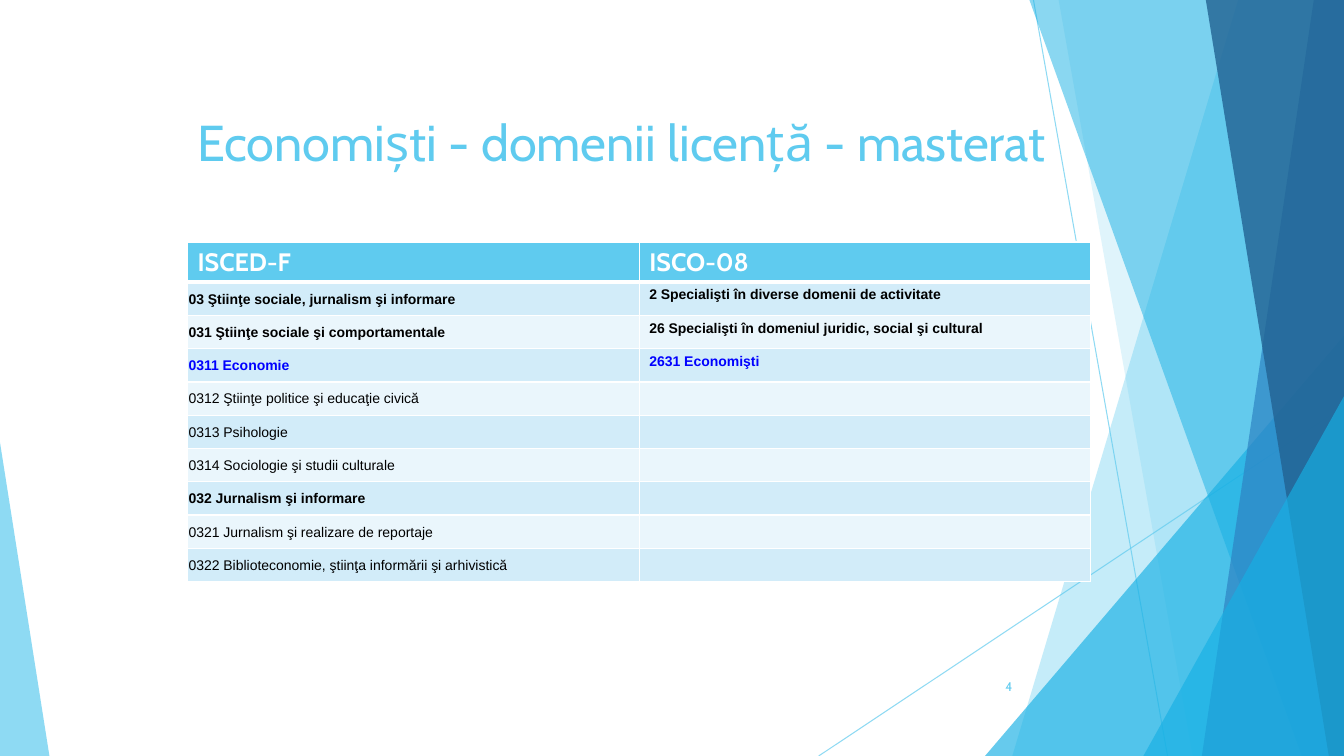
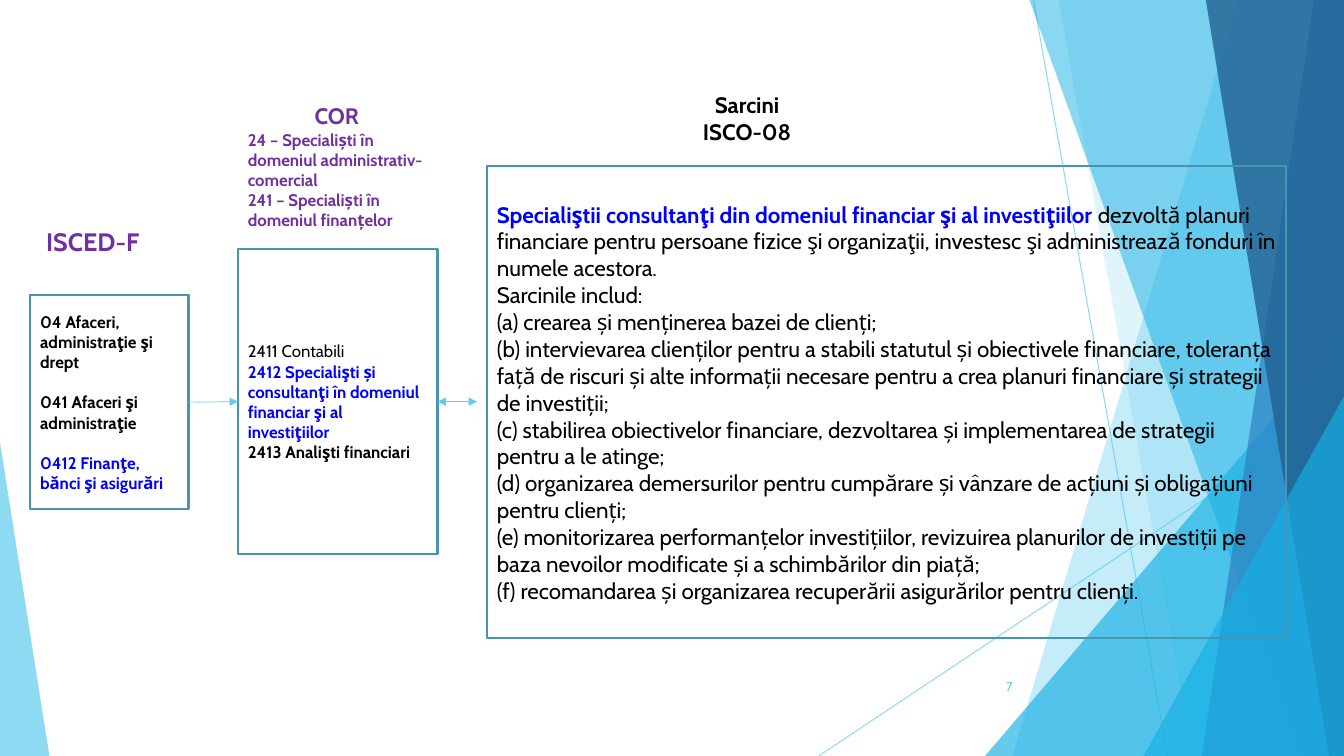
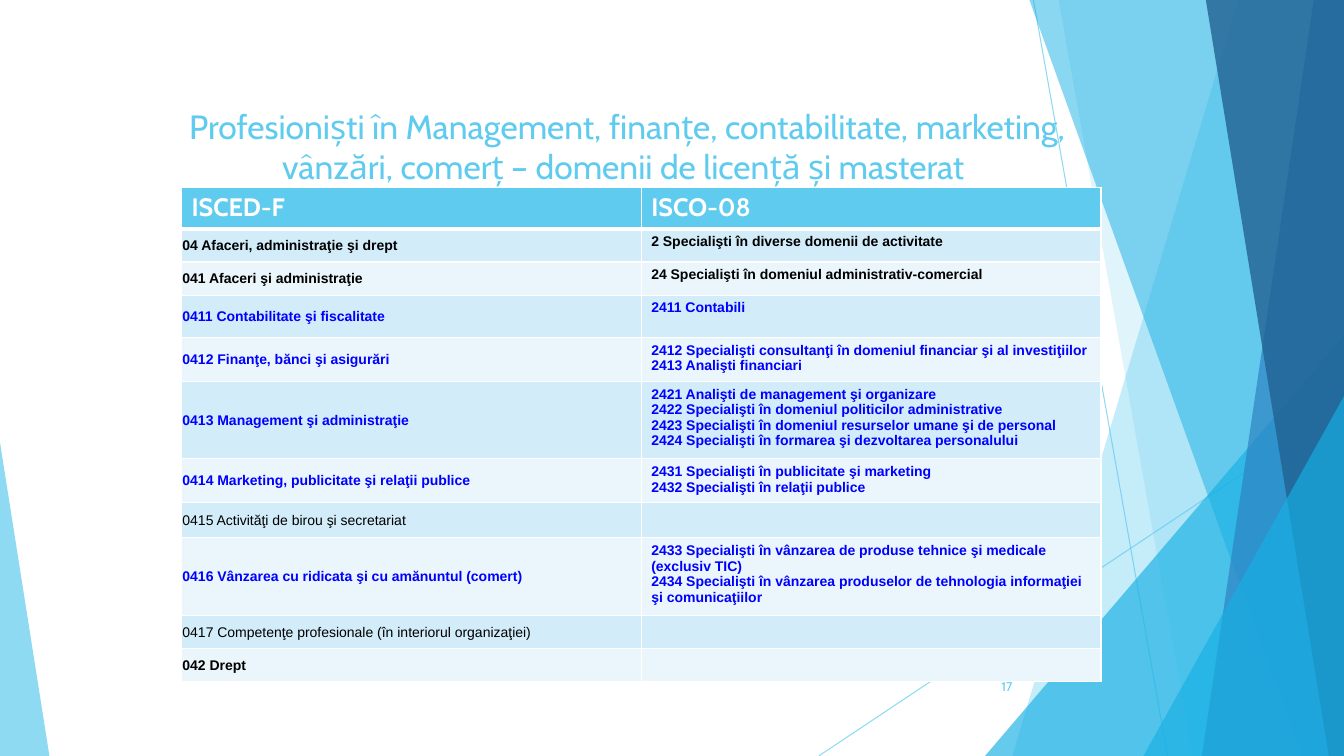
"""Builds three slides that match ISCED-F study fields with ISCO-08 occupations."""
import lxml.etree
import pptx
import pptx.dml.color
import pptx.enum.shapes
import pptx.enum.text
import pptx.oxml.ns
import pptx.util

Inches = pptx.util.Inches
Pt = pptx.util.Pt
RGB = pptx.dml.color.RGBColor.from_string
qn = pptx.oxml.ns.qn
SHAPE = pptx.enum.shapes.MSO_SHAPE
ALIGN = pptx.enum.text.PP_ALIGN
ANCHOR = pptx.enum.text.MSO_ANCHOR


class Theme:
    """Colours, fonts and text styles."""
    width, height = 13.33, 7.5
    sky, azure, blue, navy = "5FCBEF", "17B0E4", "2E83C3", "226292"
    white, black, accent, purple = "FFFFFF", "000000", "0000FF", "7030A0"
    outline = "4696B1"
    stripes = ("EAF6FC", "D2ECF9")
    styles = {
        "title": ("Cabin", 36, False, sky, ALIGN.CENTER),
        "small title": ("Cabin", 24, False, sky, ALIGN.CENTER),
        "number": ("Cabin", 9, False, sky, ALIGN.RIGHT),
        "header": ("Cabin", 18, True, white, ALIGN.LEFT),
        "group": ("Arial", 10, True, black, ALIGN.LEFT),
        "match": ("Arial", 10, True, accent, ALIGN.LEFT),
        "plain": ("Arial", 10, False, black, ALIGN.LEFT),
        "label": ("Cabin", 18, True, purple, ALIGN.CENTER),
        "cor": ("Cabin", 16, True, purple, ALIGN.CENTER),
        "cor group": ("Cabin", 12, True, purple, ALIGN.LEFT),
        "tasks label": ("Cabin", 16, True, black, ALIGN.CENTER),
        "task": ("Cabin", 16, False, black, ALIGN.LEFT),
        "task name": ("Cabin", 16, True, accent, ALIGN.LEFT),
        "code": ("Cabin", 12, False, black, ALIGN.LEFT),
        "bold code": ("Cabin", 12, True, black, ALIGN.LEFT),
        "match code": ("Cabin", 12, True, accent, ALIGN.LEFT),
    }


RAYS = [((10.25, 0), (11.58, 7.5)), ((13.33, 4.03), (8.12, 7.5))]
BACKDROP = [
    ("band", (12.28, 10.04), Theme.sky, 36),
    ("band", (10.5, 11.83), Theme.sky, 20),
    ("triangle", (9.77, 3.33, 3.56, 4.17, 1), Theme.azure, 66),
    ("band", (10.21, 12.91), Theme.azure, 50),
    ("band", (13.03, 11.92), Theme.blue, 70),
    ("band", (11.96, 13.18), Theme.navy, 80),
    ("triangle", (11.34, 3.93, 1.99, 3.57, 1), Theme.azure, 66),
    ("triangle", (0, 4.39, 0.49, 3.11, 0), Theme.sky, 70),
]

HEADERS = ("ISCED-F", "ISCO-08")
ECONOMISTS = {
    "title": ("Economiști - domenii licență - masterat ", "title"),
    "title at": (1.52, 1.05, 9.4, 0.93),
    "table at": (1.86, 2.4, 8.96),
    "header height": 0.4,
    "number": 4,
    "rows": [
        (0.33, "group", "03 Ştiinţe sociale, jurnalism şi informare",
         ["2 Specialişti în diverse domenii de activitate"]),
        (0.33, "group", "031 Ştiinţe sociale şi comportamentale",
         ["26 Specialişti în domeniul juridic, social şi cultural"]),
        (0.33, "match", "0311 Economie", ["2631 Economişti"]),
        (0.33, "plain", "0312 Ştiinţe politice şi educaţie civică", []),
        (0.33, "plain", "0313 Psihologie", []),
        (0.33, "plain", "0314 Sociologie şi studii culturale", []),
        (0.33, "group", "032 Jurnalism şi informare", []),
        (0.33, "plain", "0321 Jurnalism şi realizare de reportaje", []),
        (0.33, "plain", "0322 Biblioteconomie, ştiinţa informării şi arhivistică", []),
    ],
}
MANAGERS = {
    "title": ("Profesioniști în Management, finanțe, contabilitate, marketing, "
              "vânzări, comerț – domenii de licență și masterat ", "small title"),
    "title at": (1.52, 1, 9.4, 0.71),
    "table at": (1.8, 1.86, 9.12),
    "header height": 0.41,
    "number": 17,
    "rows": [
        (0.33, "group", "04 Afaceri, administraţie şi drept",
         ["2 Specialişti în diverse domenii de activitate"]),
        (0.33, "group", "041 Afaceri şi administraţie",
         ["24 Specialişti în domeniul administrativ-comercial"]),
        (0.42, "match", "0411 Contabilitate şi fiscalitate", ["2411 Contabili"]),
        (0.41, "match", "0412 Finanţe, bănci şi asigurări",
         ["2412 Specialişti consultanţi în domeniul financiar şi al investiţiilor",
          "2413 Analişti financiari"]),
        (0.72, "match", "0413 Management şi administraţie",
         ["2421 Analişti de management şi organizare",
          "2422 Specialişti în domeniul politicilor administrative",
          "2423 Specialişti în domeniul resurselor umane şi de personal",
          "2424 Specialişti în formarea şi dezvoltarea personalului"]),
        (0.41, "match", "0414 Marketing, publicitate şi relaţii publice",
         ["2431 Specialişti în publicitate şi marketing",
          "2432 Specialişti în relaţii publice"]),
        (0.35, "plain", "0415 Activităţi de birou şi secretariat", []),
        (0.72, "match", "0416 Vânzarea cu ridicata şi cu amănuntul (comert)",
         ["2433 Specialişti în vânzarea de produse tehnice şi medicale (exclusiv TIC)",
          "2434 Specialişti în vânzarea produselor de tehnologia informaţiei "
          "şi comunicaţiilor"]),
        (0.33, "plain", "0417 Competenţe profesionale (în interiorul organizaţiei)", []),
        (0.33, "group", "042 Drept", []),
    ],
}

FIELDS = [
    [("04 Afaceri, administraţie şi drept", "bold code")],
    [("041 Afaceri şi administraţie", "bold code")],
    [("0412 Finanţe, bănci şi asigurări", "match code")],
]
CODES = [
    [("2411 Contabili", "code")],
    [("2412 Specialişti și consultanţi în domeniul financiar şi al investiţiilor",
      "match code")],
    [("2413 Analişti financiari", "bold code")],
]
COR = [
    [("COR", "cor")],
    [("24 – Specialiști în domeniul administrativ-comercial", "cor group")],
    [("241 – Specialiști în domeniul finanțelor", "cor group")],
]
TASKS = [
    [("Specialiştii consultanţi din domeniul financiar şi al investiţiilor ", "task name"),
     ("dezvoltă planuri financiare pentru persoane fizice şi organizaţii, investesc şi "
      "administrează fonduri în numele acestora.", "task")],
] + [[(text, "task")] for text in (
    "Sarcinile includ:",
    "(a) crearea și menținerea bazei de clienți;",
    "(b) intervievarea clienților pentru a stabili statutul și obiectivele financiare, "
    "toleranța față de riscuri și alte informații necesare pentru a crea planuri "
    "financiare și strategii de investiții;",
    "(c) stabilirea obiectivelor financiare, dezvoltarea și implementarea de strategii "
    "pentru a le atinge;",
    "(d) organizarea demersurilor pentru cumpărare și vânzare de acțiuni și obligațiuni "
    "pentru clienți;",
    "(e) monitorizarea performanțelor investițiilor, revizuirea planurilor de investiții "
    "pe baza nevoilor modificate și a schimbărilor din piață;",
    "(f) recomandarea și organizarea recuperării asigurărilor pentru clienți.",
)]
LABELS = [
    ((0.27, 2.1, 1.3, 0.59), [[("ISCED-F", "label")]]),
    ((6.43, 0.88, 1.96, 0.59), [[("Sarcini", "tasks label")], [("ISCO-08", "tasks label")]]),
]


def inches(values):
    return [Inches(value) for value in values]


def write(frame, paragraphs, gap=0):
    frame.word_wrap = True
    for index, spans in enumerate(paragraphs):
        para = frame.paragraphs[0] if index == 0 else frame.add_paragraph()
        para.alignment = Theme.styles[spans[0][1]][4]
        if index and gap:
            para.space_before = Pt(gap)
        for text, style in spans:
            name, size, bold, colour, _ = Theme.styles[style]
            span = para.add_run()
            span.text = text
            for key, value in {"name": name, "size": Pt(size), "bold": bold}.items():
                setattr(span.font, key, value)
            span.font.color.rgb = RGB(colour)


def add_text(page, at, paragraphs, anchor=ANCHOR.MIDDLE):
    box = page.shapes.add_textbox(*inches(at))
    box.text_frame.vertical_anchor = anchor
    write(box.text_frame, paragraphs)


def paint(shape, fill=None, line=None):
    shape.shadow.inherit = False
    if fill:
        shape.fill.solid()
        shape.fill.fore_color.rgb = RGB(fill)
    else:
        shape.fill.background()
    if line:
        shape.line.color.rgb = RGB(line)
        shape.line.width = Pt(1.5)
    else:
        shape.line.fill.background()


def fade(shape, percent):
    for colour in shape.element.iter(qn("a:srgbClr")):
        lxml.etree.SubElement(colour, qn("a:alpha"), val=str(percent * 1000))


def add_box(page, at, paragraphs, fill=None, line=None, gap=0):
    box = page.shapes.add_shape(SHAPE.RECTANGLE, *inches(at))
    paint(box, fill, line)
    box.text_frame.vertical_anchor = ANCHOR.MIDDLE
    write(box.text_frame, paragraphs, gap)
    return box


def add_line(page, start, end, width):
    line = page.shapes.add_connector(
        pptx.enum.shapes.MSO_CONNECTOR.STRAIGHT, *inches(start + end))
    line.line.color.rgb = RGB(Theme.sky)
    line.line.width = Pt(width)
    lxml.etree.SubElement(line.element.spPr, qn("a:effectLst"))
    return line


def add_arrowheads(line, *ends):
    for end in ends:
        lxml.etree.SubElement(line.line._get_or_add_ln(), qn("a:" + end), type="triangle")


def add_backdrop(page, layout):
    for start, end in RAYS:
        fade(add_line(page, start, end, 0.75), 70)
    for kind, place, colour, opacity in BACKDROP:
        if kind == "band":
            top, bottom = place
            outline = page.shapes.build_freeform(Inches(top), 0)
            corners = [(Theme.width, 0), (Theme.width, Theme.height), (bottom, Theme.height)]
            outline.add_line_segments([inches(corner) for corner in corners])
            shape = outline.convert_to_shape()
        else:
            shape = page.shapes.add_shape(SHAPE.ISOSCELES_TRIANGLE, *inches(place[:4]))
            shape.adjustments[0] = place[4]
        paint(shape, colour)
        fade(shape, opacity)
    for shape in list(page.shapes):
        layout.shapes.element.append(shape.element)


def add_number(page, number):
    add_text(page, (9.39, 6.61, 0.75, 0.4), [[(str(number), "number")]])


def fill_cell(cell, paragraphs, colour, top, bottom):
    properties = cell._tc.get_or_add_tcPr()
    for side, width in (("lnL", 1), ("lnR", 1), ("lnT", top), ("lnB", bottom)):
        border = lxml.etree.SubElement(properties, qn("a:" + side), w=str(Pt(width)))
        solid = lxml.etree.SubElement(border, qn("a:solidFill"))
        lxml.etree.SubElement(solid, qn("a:srgbClr"), val=Theme.white)
    cell.fill.solid()
    cell.fill.fore_color.rgb = RGB(colour)
    if paragraphs:
        write(cell.text_frame, paragraphs)
    else:
        para = cell.text_frame.paragraphs[0]
        lxml.etree.SubElement(para._p, qn("a:endParaRPr"), sz="1000")


def add_table_page(deck, layout, content):
    page = deck.slides.add_slide(layout)
    add_text(page, content["title at"], [[content["title"]]], ANCHOR.TOP)
    left, top, width = content["table at"]
    heights = [content["header height"]] + [row[0] for row in content["rows"]]
    table = page.shapes.add_table(
        len(heights), 2, *inches((left, top, width, sum(heights)))).table
    for row, height in zip(table.rows, heights):
        row.height = Inches(height)
    for column, header in enumerate(HEADERS):
        fill_cell(table.cell(0, column), [[(header, "header")]], Theme.sky, 1, 3)
    for index, (_, style, field, jobs) in enumerate(content["rows"], 1):
        for column, texts in enumerate(([field], jobs)):
            fill_cell(table.cell(index, column), [[(text, style)] for text in texts],
                      Theme.stripes[index % 2], 3 if index == 1 else 1, 1)
        cell = table.cell(index, 0)
        margins = {"margin_left": 0.01, "margin_right": 0.01,
                   "margin_top": 0.01, "margin_bottom": 0}
        for key, value in margins.items():
            setattr(cell, key, Inches(value))
        cell.vertical_anchor = ANCHOR.MIDDLE
    add_number(page, content["number"])


def add_tasks_page(deck, layout):
    page = deck.slides.add_slide(layout)
    add_number(page, 7)
    fields = add_box(page, (0.3, 2.93, 1.57, 2.12), FIELDS, line=Theme.outline, gap=14.5)
    add_box(page, (4.83, 1.65, 7.93, 4.68), TASKS, line=Theme.outline)
    codes = add_box(page, (2.36, 2.47, 1.98, 3.03), CODES, line=Theme.outline)
    to_codes = add_line(page, (1.87, 3.99), (2.36, 3.99), 0.5)
    to_codes.begin_connect(fields, 3)
    to_codes.end_connect(codes, 1)
    add_arrowheads(to_codes, "tailEnd")
    for at, paragraphs in LABELS:
        add_text(page, at, paragraphs)
    to_tasks = add_line(page, (4.34, 3.99), (4.73, 3.99), 1)
    to_tasks.begin_connect(codes, 3)
    to_tasks.end_y = to_tasks.begin_y
    add_arrowheads(to_tasks, "headEnd", "tailEnd")
    add_box(page, (2.36, 0.88, 1.96, 1.54), COR, fill=Theme.white)


def main():
    deck = pptx.Presentation()
    deck.slide_width, deck.slide_height = inches((Theme.width, Theme.height))
    layout = deck.slide_layouts[6]
    add_table_page(deck, layout, ECONOMISTS)
    add_tasks_page(deck, layout)
    draft = deck.slides[1]
    own = list(draft.shapes)
    for shape in own:
        draft.shapes.element.remove(shape.element)
    add_backdrop(draft, layout)
    for shape in own:
        draft.shapes.element.append(shape.element)
    add_table_page(deck, layout, MANAGERS)
    deck.save("out.pptx")


if __name__ == "__main__":
    main()
